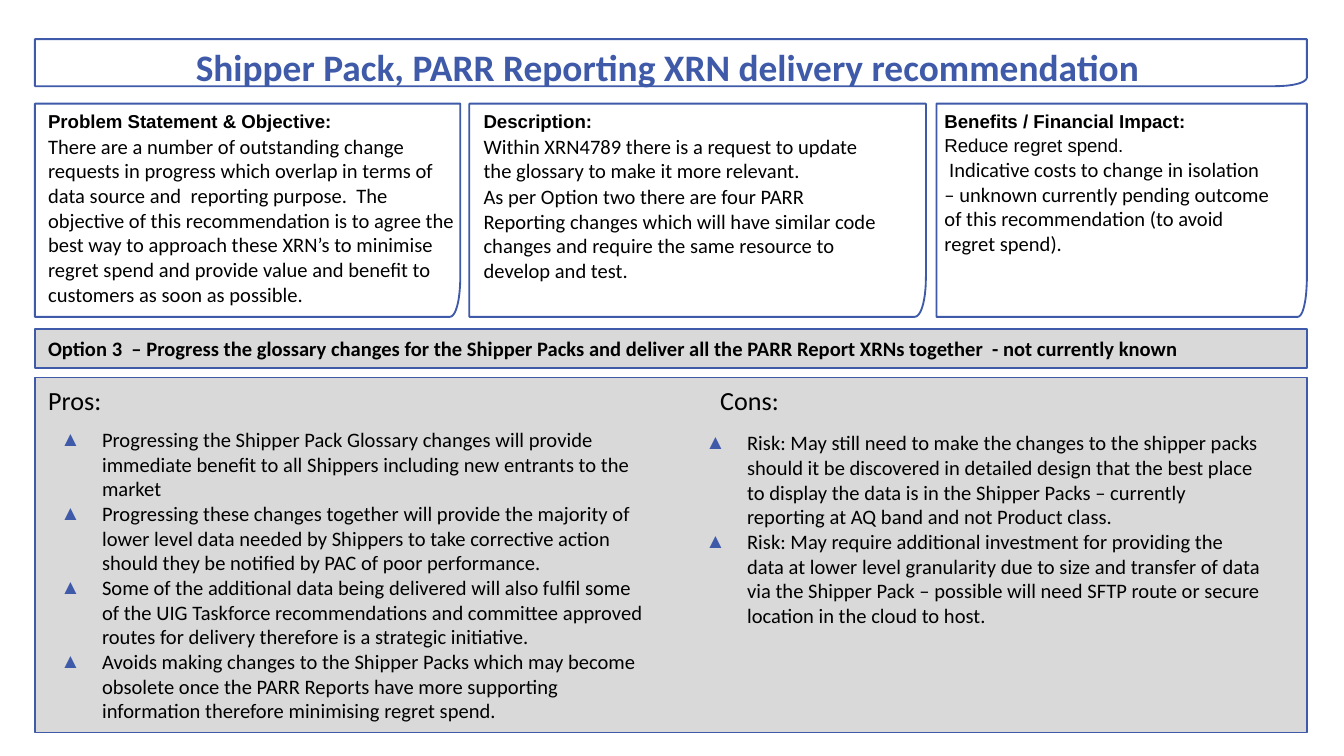
"""Build the delivery recommendation slide for the Shipper Pack and PARR Reporting changes."""
from lxml import etree
from pptx import Presentation
from pptx import util as u
from pptx.dml.color import RGBColor
from pptx.enum import shapes, text
from pptx.oxml import ns

TITLE = "Shipper Pack, PARR Reporting XRN delivery recommendation "
OPTION = ("Option 3  – Progress the glossary changes for the Shipper Packs and deliver "
          "all the PARR Report XRNs together  - not currently known")
PANEL_HEADING = "Pros:\tCons:"

SUMMARIES = [
    {"frame": (0.66, 8.04), "box": (0.66, 8.43), "heading": "Problem Statement & Objective:",
     "body": [("There are a number of outstanding change requests in progress which overlap in "
               "terms of data source and  reporting purpose.  The objective of this "
               "recommendation is to agree the best way to approach these XRN’s to minimise "
               "regret spend and provide value and benefit to customers as soon as possible.",
               "body")]},
    {"frame": (8.87, 8.63), "box": (8.89, 7.98), "heading": "Description:",
     "body": [("Within XRN4789 there is a request to update the glossary to make it more "
               "relevant.", "body"),
              ("As per Option two there are four PARR Reporting changes which will have similar "
               "code changes and require the same resource to develop and test.", "body")]},
    {"frame": (17.7, 7), "box": (17.6, 6.71), "heading": "Benefits / Financial Impact:",
     "body": [("Reduce regret spend.", "note"),
              (" Indicative costs to change in isolation – unknown currently pending outcome "
               "of this recommendation (to avoid regret spend).", "body")]},
]

ARGUMENTS = [
    {"area": (0.89, 7.95, 11.61, 6.3), "points": [
        "Progressing the Shipper Pack Glossary changes will provide immediate benefit to all "
        "Shippers including new entrants to the market",
        "Progressing these changes together will provide the majority of lower level data needed "
        "by Shippers to take corrective action should they be notified by PAC of poor performance.",
        "Some of the additional data being delivered will also fulfil some of the UIG Taskforce "
        "recommendations and committee approved routes for delivery therefore is a strategic "
        "initiative.",
        "Avoids making changes to the Shipper Packs which may become obsolete once the PARR "
        "Reports have more supporting information therefore minimising regret spend."]},
    {"area": (13.08, 8.01, 11, 4.8), "points": [
        "Risk: May still need to make the changes to the shipper packs should it be discovered in "
        "detailed design that the best place to display the data is in the Shipper Packs – "
        "currently reporting at AQ band and not Product class.",
        "Risk: May require additional investment for providing the data at lower level "
        "granularity due to size and transfer of data via the Shipper Pack – possible will need "
        "SFTP route or secure location in the cloud to host."]},
]


class Theme:
    """Colours, typefaces and type sizes."""
    blue, black, grey = "3E5AA8", "000000", "D9D9D9"
    styles = {
        "title": {"size": 20, "face": "Calibri", "bold": True, "color": blue},
        "heading": {"size": 10, "face": "Arial", "bold": True},
        "note": {"size": 10, "face": "Arial"},
        "body": {"size": 11, "face": "Calibri"},
        "option": {"size": 11, "face": "Calibri", "bold": True},
        "panel": {"size": 14, "face": "Calibri"},
    }


LEFT, WIDTH = 0.66, 24.04
SUMMARY_TOP, SUMMARY_HEIGHT = 1.96, 4.03
BULLET_INDENT, CONS_TAB = 0.79, 12.7


def lengths(*values):
    """Convert centimetre values to slide lengths."""
    return [u.Cm(value) for value in values]


def add_child(parent, tag, **attributes):
    """Append a drawing element to a parent."""
    return etree.SubElement(parent, ns.qn(tag), {key: str(val) for key, val in attributes.items()})


def add_text(frame, content, *, size, face, bold=False, color=Theme.black,
             align=text.PP_ALIGN.LEFT, after=0, bullet=None, tab=None):
    """Add one formatted paragraph to a text frame."""
    para = frame.paragraphs[0]
    if para.runs:
        para = frame.add_paragraph()
    para.alignment = align
    para.space_after = u.Pt(after)
    properties = para._p.get_or_add_pPr()
    if bullet:
        indent = u.Cm(BULLET_INDENT)
        properties.set("marL", str(indent))
        properties.set("indent", str(-indent))
        add_child(add_child(properties, "a:buClr"), "a:srgbClr", val=Theme.blue)
        add_child(properties, "a:buFont", typeface="Arial")
        add_child(properties, "a:buChar", char=bullet)
    if tab:
        add_child(add_child(properties, "a:tabLst"), "a:tab", pos=u.Cm(tab), algn="l")
    span = para.add_run()
    span.text = content
    span.font.size, span.font.name, span.font.bold = u.Pt(size), face, bold
    span.font.color.rgb = RGBColor.from_string(color)


def add_box(page, area, anchor=text.MSO_ANCHOR.TOP):
    """Add a wrapping text box and return its text frame."""
    frame = page.shapes.add_textbox(*lengths(*area)).text_frame
    frame.word_wrap, frame.vertical_anchor = True, anchor
    return frame


def outline(shape, weight):
    """Give a shape the blue outline without a shadow."""
    shape.shadow.inherit = False
    shape.line.color.rgb = RGBColor.from_string(Theme.blue)
    shape.line.width = u.Pt(weight)


def add_frame(page, left, top, width, height, steps=16):
    """Draw an unfilled frame whose lower right corner is curved."""
    corner = [(1, 0.81), (1, 0.92), (0.99, 1), (0.975, 1)]
    curve = []
    for step in range(steps + 1):
        t = step / steps
        weights = [(1 - t) ** 3, 3 * t * (1 - t) ** 2, 3 * t ** 2 * (1 - t), t ** 3]
        curve.append([sum(w * point[axis] for w, point in zip(weights, corner))
                      for axis in (0, 1)])
    points = [(u.Cm(left + width * x), u.Cm(top + height * y))
              for x, y in [(0, 0), (1, 0), *curve, (0, 1)]]
    builder = page.shapes.build_freeform(*points[0])
    builder.add_line_segments(points[1:], close=True)
    shape = builder.convert_to_shape()
    shape.fill.background()
    outline(shape, 1)


def add_band(page, top, height):
    """Draw a full-width grey rectangle and return its text frame."""
    shape = page.shapes.add_shape(shapes.MSO_SHAPE.RECTANGLE, *lengths(LEFT, top, WIDTH, height))
    shape.fill.solid()
    shape.fill.fore_color.rgb = RGBColor.from_string(Theme.grey)
    outline(shape, 0.75)
    frame = shape.text_frame
    frame.word_wrap, frame.vertical_anchor = True, text.MSO_ANCHOR.TOP
    return frame


def main():
    """Assemble and save the slide."""
    styles = Theme.styles
    deck = Presentation()
    deck.slide_width, deck.slide_height = lengths(25.4, 14.29)
    page = deck.slides.add_slide(deck.slide_layouts[6])

    title = add_box(page, (1.27, 0.36, 22.86, 1.78), text.MSO_ANCHOR.MIDDLE)
    add_text(title, TITLE, align=text.PP_ALIGN.CENTER, **styles["title"])
    add_frame(page, LEFT, 0.74, WIDTH, 0.89)

    for summary in SUMMARIES:
        left, width = summary["frame"]
        add_frame(page, left, SUMMARY_TOP, width, SUMMARY_HEIGHT)
        left, width = summary["box"]
        frame = add_box(page, (left, SUMMARY_TOP, width, SUMMARY_HEIGHT))
        for content, style in [(summary["heading"], "heading"), *summary["body"]]:
            add_text(frame, content, after=0.5, **styles[style])

    add_text(add_band(page, 6.22, 0.74), OPTION, **styles["option"])
    add_text(add_band(page, 7.14, 6.71), PANEL_HEADING, tab=CONS_TAB, **styles["panel"])

    for argument in ARGUMENTS:
        frame = add_box(page, argument["area"])
        for point in argument["points"]:
            add_text(frame, point, bullet="▲", **styles["body"])

    deck.save("out.pptx")


if __name__ == "__main__":
    main()
